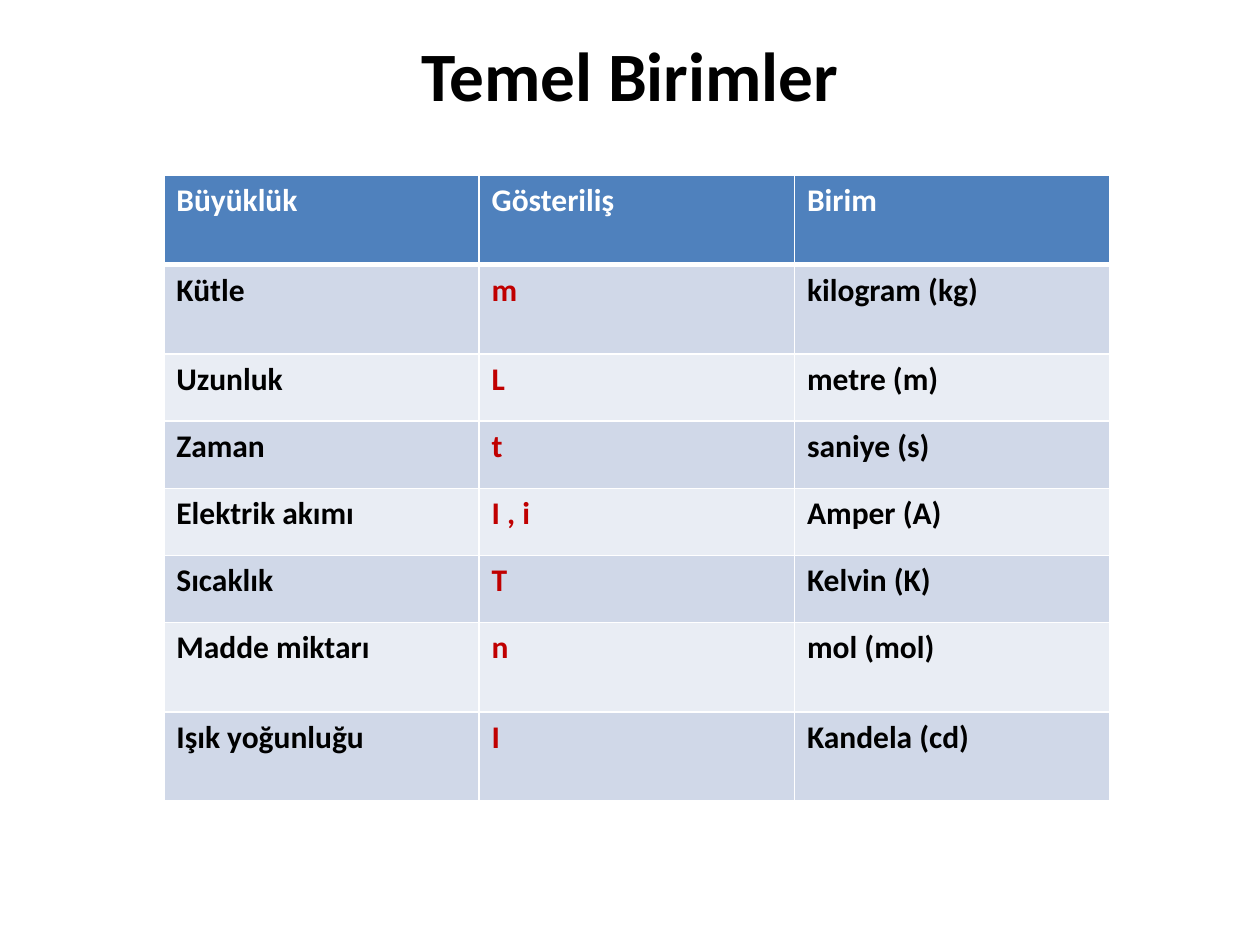
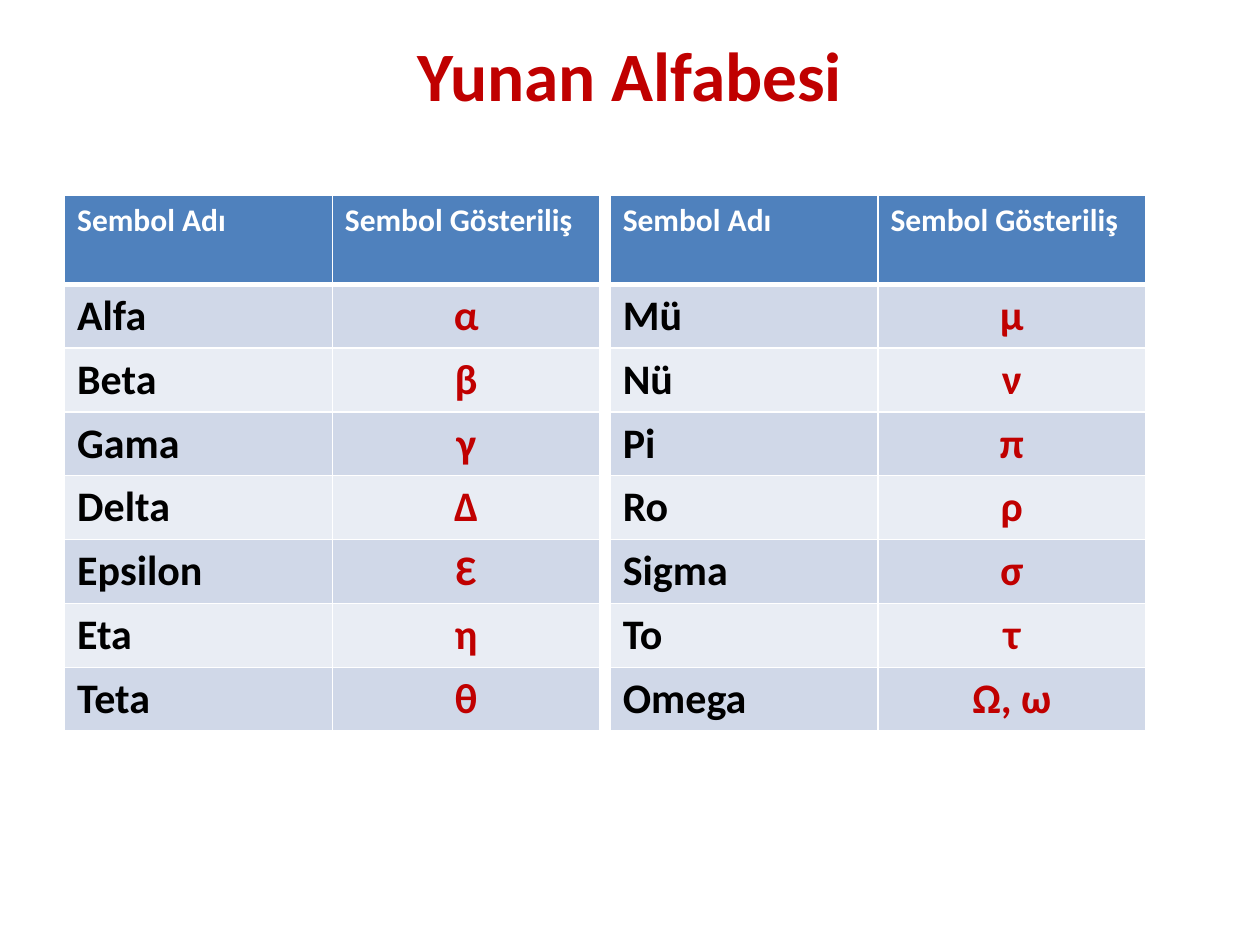
import dataclasses

import pptx
import pptx.dml.color
import pptx.enum.text
import pptx.oxml.ns
import pptx.util
from lxml import etree

Pt = pptx.util.Pt
ALIGN = pptx.enum.text.PP_ALIGN


# Shared style
@dataclasses.dataclass(frozen=True)
class Theme:
    font: str = "Calibri"
    black: str = "000000"
    white: str = "FFFFFF"
    red: str = "C00000"
    header: str = "4F81BD"
    bands: tuple = ("D0D8E8", "E9EDF4")
    title_size: float = 39.6
    text_size: float = 18
    symbol_size: float = 24
    border: float = 1
    header_border: float = 3


THEME = Theme()


def color(value):
    return pptx.dml.color.RGBColor.from_string(value)


def write_text(frame, text, *, size, ink, bold=True, align=ALIGN.LEFT):
    paragraph = frame.paragraphs[0]
    paragraph.alignment = align
    run = paragraph.add_run()
    run.text = text
    run.font.name = THEME.font
    run.font.size = Pt(size)
    run.font.bold = bold
    run.font.color.rgb = color(ink)


def set_borders(cell, widths):
    """Draw white borders; widths are points by side: L, R, T, B."""
    properties = cell._tc.get_or_add_tcPr()
    qn = pptx.oxml.ns.qn
    for side, width in widths.items():
        line = etree.SubElement(properties, qn(f"a:ln{side}"), w=str(Pt(width)))
        fill = etree.SubElement(line, qn("a:solidFill"))
        etree.SubElement(fill, qn("a:srgbClr"), val=THEME.white)


class Deck:
    def __init__(self, width, height):
        self.presentation = pptx.Presentation()
        self.presentation.slide_width = Pt(width)
        self.presentation.slide_height = Pt(height)
        self.slide = None

    def add_slide(self):
        self.slide = self.presentation.slides.add_slide(
            self.presentation.slide_layouts[6])

    def title(self, text, ink):
        shape = self.slide.shapes.add_textbox(Pt(36), Pt(21.6), Pt(648), Pt(90))
        frame = shape.text_frame
        frame.word_wrap = True
        frame.vertical_anchor = pptx.enum.text.MSO_ANCHOR.MIDDLE
        # The lower inset lifts the line into the upper half of the box
        frame.margin_top, frame.margin_bottom = 0, Pt(48.4)
        write_text(frame, text, size=THEME.title_size, ink=ink,
                   align=ALIGN.CENTER)

    def table(self, rows, left, top, column_width, row_heights,
              body_size, symbol_align):
        column_count = len(rows[0])
        shape = self.slide.shapes.add_table(
            len(rows), column_count, Pt(left), Pt(top),
            Pt(column_width * column_count), Pt(sum(row_heights)))
        table = shape.table
        table.horz_banding = False
        for column in table.columns:
            column.width = Pt(column_width)
        for index, (values, height) in enumerate(zip(rows, row_heights)):
            table.rows[index].height = Pt(height)
            for position, value in enumerate(values):
                self.cell(table.cell(index, position), value, index,
                          position == 1, body_size, symbol_align)

    def cell(self, cell, value, row, is_symbol, body_size, symbol_align):
        is_header = row == 0
        set_borders(cell, {
            "L": THEME.border,
            "R": THEME.border,
            "T": THEME.header_border if row == 1 else THEME.border,
            "B": THEME.header_border if is_header else THEME.border,
        })
        cell.fill.solid()
        fill = THEME.header if is_header else THEME.bands[(row - 1) % 2]
        cell.fill.fore_color.rgb = color(fill)
        if is_header:
            write_text(cell.text_frame, value, size=THEME.text_size,
                       ink=THEME.white)
        else:
            write_text(cell.text_frame, value, size=body_size,
                       ink=THEME.red if is_symbol else THEME.black,
                       align=symbol_align if is_symbol else ALIGN.LEFT)


# Content
BASE_UNITS = [
    ("Büyüklük", "Gösteriliş", "Birim"),
    ("Kütle", "m", "kilogram (kg)"),
    ("Uzunluk", "L", "metre (m)"),
    ("Zaman", "t", "saniye (s)"),
    ("Elektrik akımı", "I , i", "Amper (A)"),
    ("Sıcaklık", "T", "Kelvin (K)"),
    ("Madde miktarı", "n", "mol (mol)"),
    ("Işık yoğunluğu", "I", "Kandela (cd)"),
]
GREEK_HEADER = ("Sembol Adı", "Sembol Gösteriliş")
GREEK_LETTERS = [
    ("Alfa", "α"), ("Beta", "β"), ("Gama", "γ"), ("Delta", "∆"),
    ("Epsilon", "Ɛ"), ("Eta", "η"), ("Teta", "θ"),
    ("Mü", "μ"), ("Nü", "ν"), ("Pi", "π"), ("Ro", "ρ"),
    ("Sigma", "σ"), ("To", "τ"), ("Omega", "Ω, ω"),
]
TALL_ROW, UNIT_ROW, LETTER_ROW = 51, 38.4, 36.5


def main():
    deck = Deck(720, 540)

    # Base units
    deck.add_slide()
    deck.title("Temel Birimler", THEME.black)
    deck.table(BASE_UNITS, 93.6, 100.3, 180.2,
               [TALL_ROW] * 2 + [UNIT_ROW] * 4 + [TALL_ROW] * 2,
               THEME.text_size, ALIGN.LEFT)

    # Greek alphabet, in two halves side by side
    deck.add_slide()
    deck.title("Yunan Alfabesi", THEME.red)
    half = len(GREEK_LETTERS) // 2
    for side in range(2):
        letters = GREEK_LETTERS[side * half:(side + 1) * half]
        deck.table([GREEK_HEADER] + letters, 36.9 + side * 311.8, 111.4, 153,
                   [TALL_ROW] + [LETTER_ROW] * half,
                   THEME.symbol_size, ALIGN.CENTER)

    deck.presentation.save("out.pptx")


if __name__ == "__main__":
    main()
